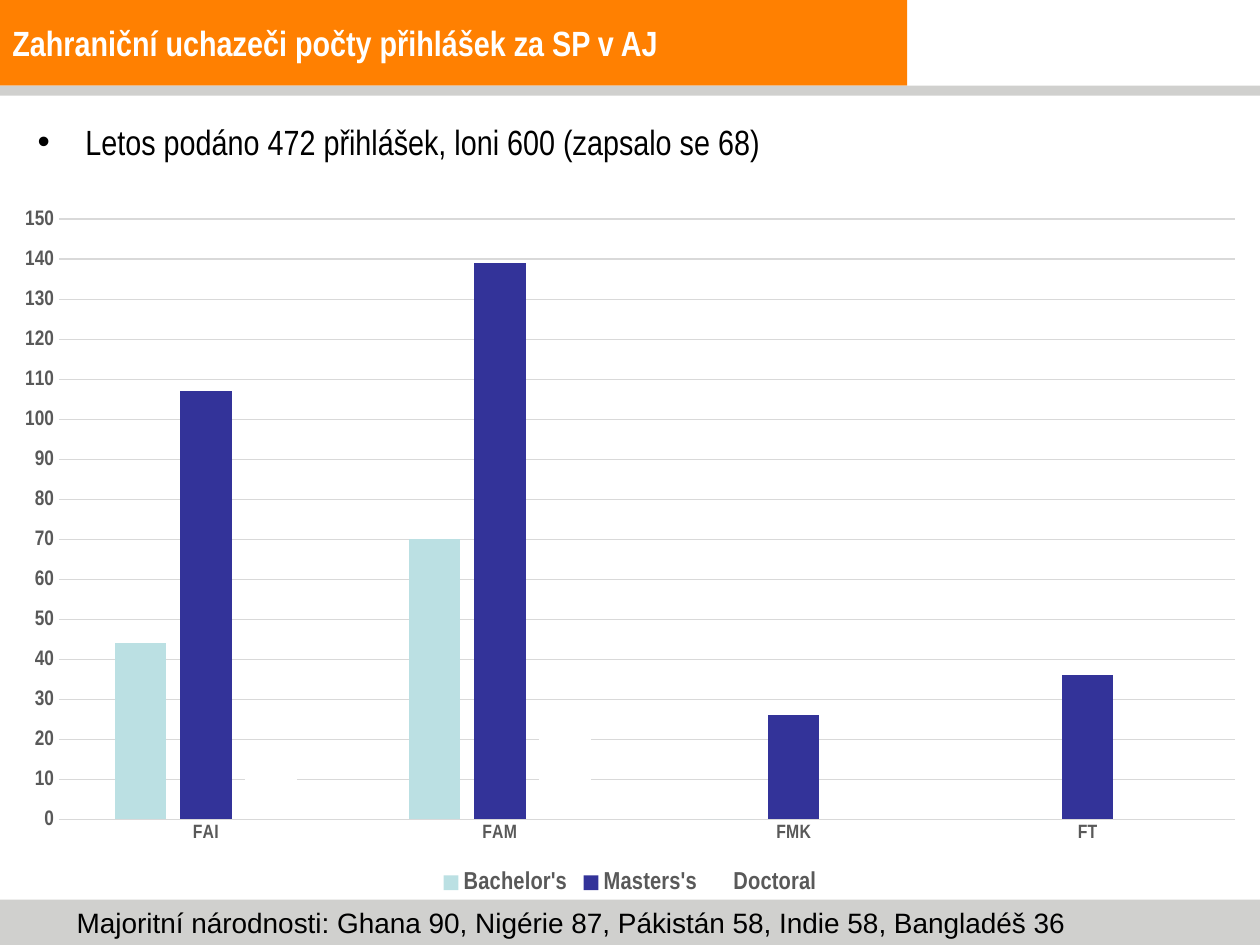
from dataclasses import dataclass

from lxml import etree
from pptx import Presentation
from pptx.chart.data import CategoryChartData
from pptx.dml.color import RGBColor
from pptx.enum.chart import XL_CHART_TYPE, XL_LEGEND_POSITION, XL_TICK_MARK
from pptx.enum.shapes import MSO_SHAPE
from pptx.enum.text import MSO_ANCHOR
from pptx.oxml import parse_xml
from pptx.oxml.ns import nsdecls, qn
from pptx.util import Inches, Pt

RECTANGLE = MSO_SHAPE.RECTANGLE
COLUMNS = XL_CHART_TYPE.COLUMN_CLUSTERED
LEGEND_BOTTOM = XL_LEGEND_POSITION.BOTTOM
NO_TICK = XL_TICK_MARK.NONE
TOP, MIDDLE = MSO_ANCHOR.TOP, MSO_ANCHOR.MIDDLE

NARROW = "Arial Narrow"
ORANGE, SILVER, WHITE, BLACK = "FF8001", "D0D0CE", "FFFFFF", "000000"
LABEL_GREY, GRID_GREY = "595959", "D9D9D9"


@dataclass
class Box:
    left: float
    top: float
    width: float
    height: float

    def lengths(self) -> tuple:
        return tuple(map(Inches, (self.left, self.top, self.width, self.height)))


@dataclass
class Band:
    box: Box
    color: str


@dataclass
class Text:
    box: Box
    words: str
    size: float
    color: str = BLACK
    font: str = NARROW
    bold: bool = False
    anchor: MSO_ANCHOR = TOP
    hanging: float = 0
    bullet: str = ""
    shadow: bool = False


@dataclass
class Series:
    name: str
    values: tuple
    color: str


TITLE_BOX = Box(0, 0, 7.2, 0.68)
BANDS = [
    Band(TITLE_BOX, ORANGE),
    Band(Box(0, 7.14, 10, 0.36), SILVER),
    Band(Box(0, 0.68, 10, 0.08), SILVER),
]
TEXTS = [
    Text(TITLE_BOX, "Zahraniční uchazeči počty přihlášek za SP v AJ", 20,
         color=WHITE, bold=True, anchor=MIDDLE, hanging=0.2, shadow=True),
    Text(Box(0.2, 0.91, 9.53, 0.5),
         "Letos podáno 472 přihlášek, loni 600 (zapsalo se 68)", 20,
         hanging=0.38, bullet="•"),
    Text(Box(0.51, 7.14, 9.06, 0.37),
         "Majoritní národnosti: Ghana 90, Nigérie 87, Pákistán 58, Indie 58, Bangladéš 36",
         16, font="Arial"),
]
CHART_BOX = Box(0, 1.55, 10, 5.59)
FACULTIES = ["FAI", "FAM", "FMK", "FT"]
SERIES = [
    Series("Bachelor's", (44, 70, 0, 0), "BBE0E3"),
    Series("Masters's", (107, 139, 26, 36), "333399"),
    Series("Doctoral", (13, 29, 3, 5), WHITE),
]


def rgb(color: str) -> RGBColor:
    return RGBColor.from_string(color)


def format_font(font, size: float, color: str, name: str = NARROW, bold: bool = False) -> None:
    for attribute, value in {"size": Pt(size), "name": name, "bold": bold}.items():
        setattr(font, attribute, value)
    font.color.rgb = rgb(color)


def format_line(line, color: str) -> None:
    line.color.rgb = rgb(color)
    line.width = Pt(0.75)


def add_band(slide, band: Band) -> None:
    shape = slide.shapes.add_shape(RECTANGLE, *band.box.lengths())
    shape.shadow.inherit = False
    shape.fill.solid()
    shape.fill.fore_color.rgb = rgb(band.color)
    shape.line.fill.background()


def add_text(slide, text: Text) -> None:
    frame = slide.shapes.add_textbox(*text.box.lengths()).text_frame
    frame.word_wrap = True
    frame.vertical_anchor = text.anchor
    paragraph = frame.paragraphs[0]
    if text.hanging:
        properties = paragraph._p.get_or_add_pPr()
        properties.set("marL", str(Inches(text.hanging)))
        properties.set("indent", str(-Inches(text.hanging)))
        if text.bullet:
            etree.SubElement(properties, qn("a:buFont"), typeface="Arial")
            etree.SubElement(properties, qn("a:buChar"), char=text.bullet)
    run = paragraph.add_run()
    run.text = text.words
    format_font(run.font, text.size, text.color, text.font, text.bold)
    if text.shadow:
        # Effects stand straight after the fill of the run
        run.font.fill._xPr.find(qn("a:solidFill")).addnext(parse_xml(
            f'<a:effectLst {nsdecls("a")}><a:outerShdw blurRad="38100" dist="38100" '
            'dir="2700000"><a:srgbClr val="808080"/></a:outerShdw></a:effectLst>'))


def add_applications_chart(slide) -> None:
    data = CategoryChartData()
    data.categories = FACULTIES
    for series in SERIES:
        data.add_series(series.name, series.values)
    chart = slide.shapes.add_chart(COLUMNS, *CHART_BOX.lengths(), data).chart
    format_font(chart.font, 10, BLACK)
    chart.has_title = False

    # Columns
    plot = chart.plots[0]
    for attribute, value in {"gap_width": 219, "overlap": -27, "vary_by_categories": False}.items():
        setattr(plot, attribute, value)
    for drawn, series in zip(plot.series, SERIES):
        drawn.format.fill.solid()
        drawn.format.fill.fore_color.rgb = rgb(series.color)
        drawn.invert_if_negative = False

    # Axes
    for axis, size in ((chart.category_axis, 11), (chart.value_axis, 12)):
        axis.major_tick_mark = axis.minor_tick_mark = NO_TICK
        format_font(axis.tick_labels.font, size, LABEL_GREY, bold=True)
    format_line(chart.category_axis.format.line, GRID_GREY)
    value_axis = chart.value_axis
    scale = {"minimum_scale": 0, "maximum_scale": 150, "major_unit": 10}
    for attribute, value in scale.items():
        setattr(value_axis, attribute, value)
    value_axis.format.line.fill.background()
    format_line(value_axis.major_gridlines.format.line, GRID_GREY)

    # Legend
    chart.has_legend = True
    chart.legend.position = LEGEND_BOTTOM
    chart.legend.include_in_layout = False
    format_font(chart.legend.font, 14, LABEL_GREY, bold=True)


def main() -> None:
    presentation = Presentation()
    presentation.slide_width, presentation.slide_height = Inches(10), Inches(7.5)
    slide = presentation.slides.add_slide(presentation.slide_layouts[6])
    for band in BANDS:
        add_band(slide, band)
    add_applications_chart(slide)
    for text in TEXTS:
        add_text(slide, text)
    presentation.save("out.pptx")


if __name__ == "__main__":
    main()
